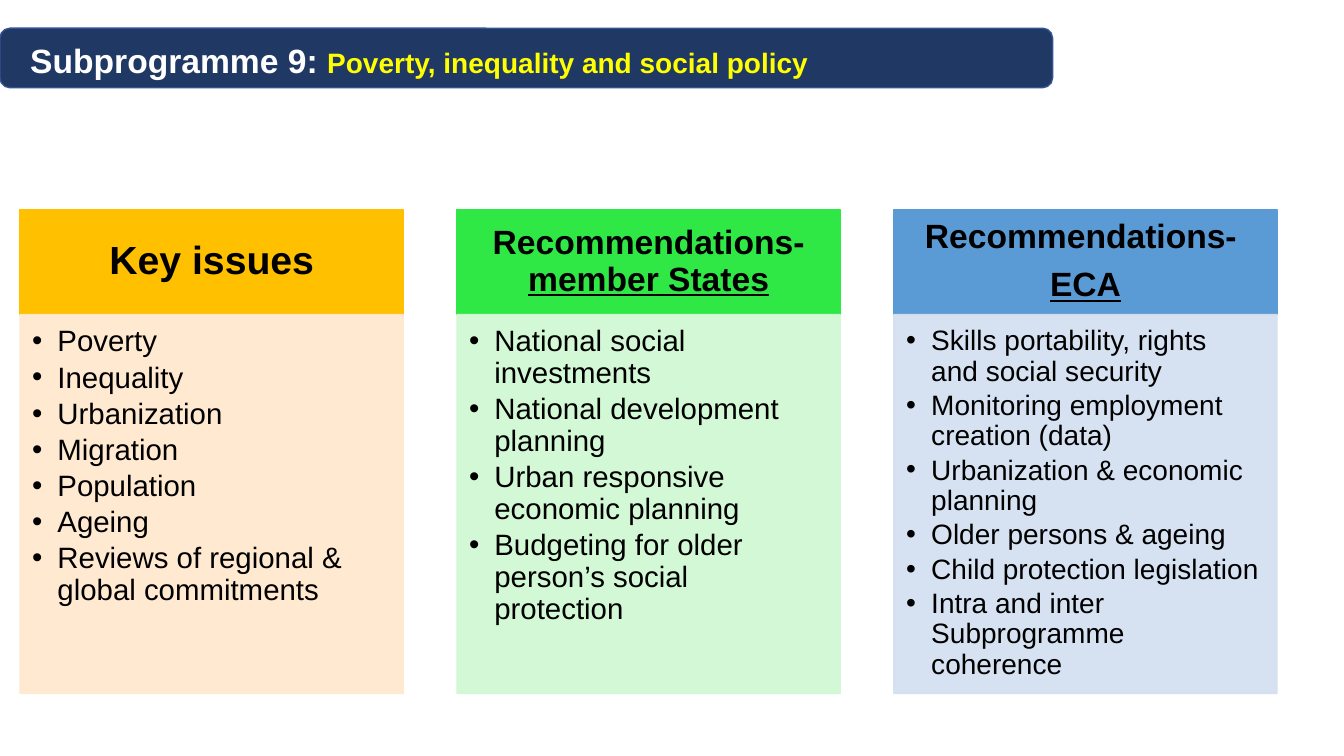
from pptx import Presentation
from pptx.dml.color import RGBColor as RGB
from pptx.enum.shapes import MSO_SHAPE as Shape
from pptx.enum.text import MSO_ANCHOR as Anchor, MSO_AUTO_SIZE as Fit, PP_ALIGN as Align
from pptx.oxml.ns import qn
from pptx.util import Inches, Pt
from lxml.etree import SubElement

# Content: heads are lists of paragraphs, each a list of (text, underlined) runs
TITLE = [("Subprogramme 9: ", 24, "white"),
         ("Poverty, inequality and social policy", 20, "yellow")]
COLUMNS = [
    {"head": [[("Key issues", False)]], "size": 28, "pad": (0.22, 0.12),
     "fill": "gold", "tint": "cream", "text": 21,
     "items": ["Poverty", "Inequality", "Urbanization", "Migration", "Population",
               "Ageing", "Reviews of regional & global commitments"]},
    {"head": [[("Recommendations- ", False), ("member States", True)]],
     "size": 24, "pad": (0.19, 0.11),
     "fill": "green", "tint": "mint", "text": 21,
     "items": ["National social investments", "National development planning",
               "Urban responsive economic planning",
               "Budgeting for older person’s social protection"]},
    {"head": [[("Recommendations- ", False)], [("ECA", True)]],
     "size": 24, "pad": (0.19, 0.11),
     "fill": "blue", "tint": "ice", "text": 20,
     "items": ["Skills portability, rights and social security",
               "Monitoring employment creation (data)",
               "Urbanization & economic planning", "Older persons & ageing",
               "Child protection legislation",
               "Intra and inter Subprogramme coherence"]},
]
COLORS = {"white": "FFFFFF", "yellow": "FFFF00", "black": "000000",
          "navy": "203864", "edge": "325491",
          "gold": "FFC000", "green": "30E845", "blue": "5B9BD5",
          "cream": "FFE8CC", "mint": "CFF8D1", "ice": "D2DFF0"}
LEFT, TOP, WIDTH, HEAD, BODY = 0.2, 2.08, 3.8, 1.04, 3.76
STEP = 13 / 3


def color(name):
    return RGB.from_string(COLORS[name])


def box(kind, area, fill, line, alpha=None):
    shape = slide.shapes.add_shape(kind, *[Inches(v) for v in area])
    shape.shadow.inherit = False
    shape.fill.solid()
    shape.fill.fore_color.rgb = color(fill)
    shape.line.color.rgb = color(line)
    shape.line.width = Pt(1)
    if alpha:
        for tag in shape._element.spPr.iter(qn("a:srgbClr")):
            SubElement(tag, qn("a:alpha"), val=str(alpha * 1000))
    return shape


def setup(frame, anchor, pads):
    frame.word_wrap = True
    frame.auto_size = Fit.NONE
    frame.vertical_anchor = anchor
    (frame.margin_left, frame.margin_top,
     frame.margin_right, frame.margin_bottom) = [Inches(v) for v in pads]


def add_run(para, text, size, name, bold=False, under=None):
    run = para.add_run()
    run.text = text
    font = run.font
    font.name, font.size, font.bold, font.underline = "Arial", Pt(size), bold, under
    font.color.rgb = color(name)


def add_para(frame, index, align, after):
    para = frame.add_paragraph() if index else frame.paragraphs[0]
    para.alignment = align
    para.line_spacing = 0.9
    para.space_before = Pt(0)
    para.space_after = Pt(after)
    return para


def bullet(para):
    props = para._p.get_or_add_pPr()
    props.set("marL", str(Inches(0.25)))
    props.set("indent", str(-Inches(0.25)))
    SubElement(props, qn("a:buFont"), typeface="Arial")
    SubElement(props, qn("a:buChar"), char="•")


deck = Presentation()
deck.slide_width, deck.slide_height = Inches(13.33), Inches(7.5)
slide = deck.slides.add_slide(deck.slide_layouts[5])

# Title on its bar, with the bar behind
bar = box(Shape.ROUNDED_RECTANGLE, (0, 0.28, 10.44, 0.59), "navy", "edge")
title = slide.shapes.title
title._element.addprevious(bar._element)
title.left, title.top, title.width, title.height = [
    Inches(v) for v in (0.2, 0.35, 9.07, 0.5)]
setup(title.text_frame, Anchor.TOP, (0.1, 0.05, 0.1, 0.05))
para = title.text_frame.paragraphs[0]
para.alignment = Align.LEFT
for text, size, name in TITLE:
    add_run(para, text, size, name, bold=True)

# Three columns: a head over a bulleted body
for i, col in enumerate(COLUMNS):
    left = LEFT + i * STEP
    head = box(Shape.RECTANGLE, (left, TOP, WIDTH, HEAD), col["fill"], col["fill"])
    setup(head.text_frame, Anchor.MIDDLE, col["pad"] * 2)
    for j, runs in enumerate(col["head"]):
        para = add_para(head.text_frame, j, Align.CENTER, 0.35 * col["size"])
        for text, under in runs:
            add_run(para, text, col["size"], "black", bold=True, under=under)

    body = box(Shape.RECTANGLE, (left, TOP + HEAD, WIDTH, BODY),
               col["tint"], col["tint"], alpha=90)
    setup(body.text_frame, Anchor.TOP, (0.12, 0.12, 0.16, 0.18))
    for j, text in enumerate(col["items"]):
        para = add_para(body.text_frame, j, Align.LEFT, 0.15 * col["text"])
        bullet(para)
        add_run(para, text, col["text"], "black")

deck.save("out.pptx")
